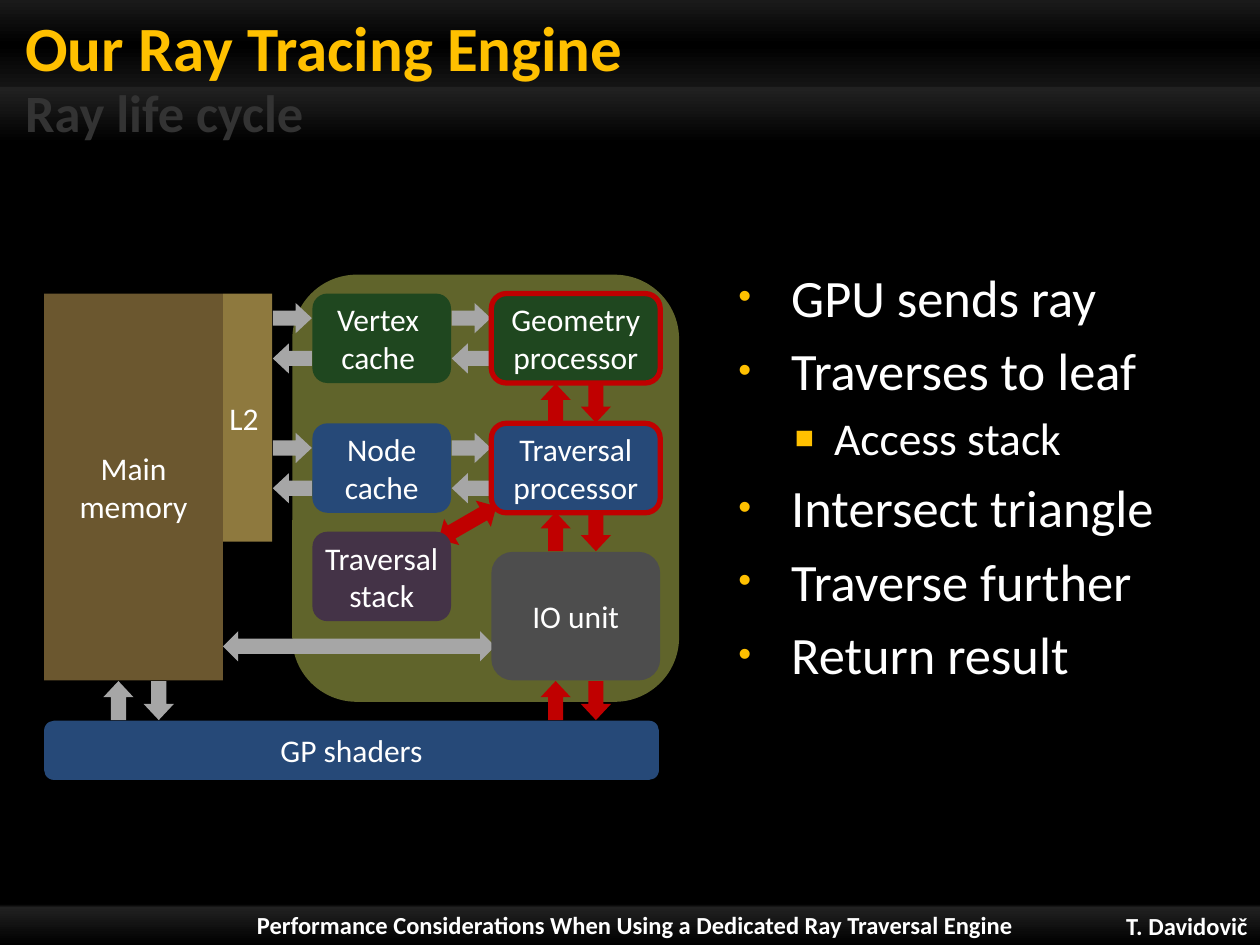
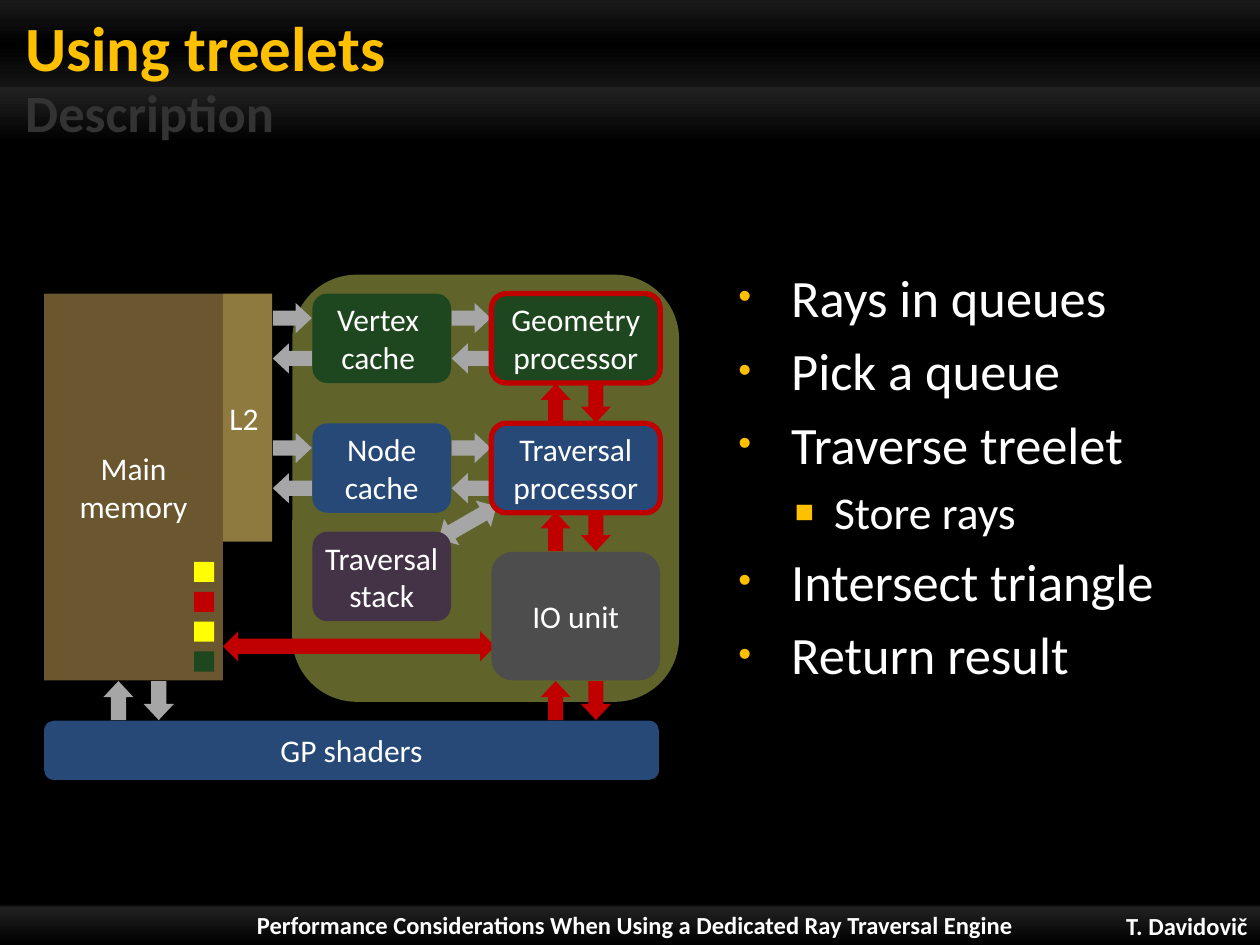
from lxml import etree
from pptx import Presentation
from pptx import util as u
from pptx.dml.color import RGBColor
from pptx.enum import shapes, text
from pptx.oxml.ns import qn

FONT = "Calibri"
WHITE, BLACK, AMBER = "FFFFFF", "000000", "FFC000"
RED, GREY, YELLOW = "C00000", "A6A6A6", "FFFF00"
GREEN, BLUE, PURPLE, IO_GREY = "1F471F", "264978", "443347", "4D4D4D"
OLIVE, BROWN, TAN, SUBTITLE = "F0FC6C", "6B572F", "8E793E", "333333"

TITLE_BAND = [(0, "1A1A1A"), (31, BLACK), (60, "141414"), (61, "212121"), (100, BLACK)]
FOOTER_BAND = [(5, BLACK), (10, "141414"), (11, "212121"), (100, BLACK)]
TALK = "Performance Considerations When Using a Dedicated Ray Traversal Engine"
SPEAKER = "T. Davidovič"

RECT = shapes.MSO_SHAPE.RECTANGLE
ROUND = shapes.MSO_SHAPE.ROUNDED_RECTANGLE
LEFT, CENTER, RIGHT = text.PP_ALIGN.LEFT, text.PP_ALIGN.CENTER, text.PP_ALIGN.RIGHT
TOP, MIDDLE, BOTTOM = (text.MSO_ANCHOR.TOP, text.MSO_ANCHOR.MIDDLE,
                       text.MSO_ANCHOR.BOTTOM)

ROWS = (2.33, 3.36)
BOX_HEIGHT = 0.71
CACHE_LEFT, CACHE_WIDTH = 2.48, 1.1
UNIT_LEFT, UNIT_WIDTH = 3.9, 1.34
ARROW_WIDTH, ARROW_LENGTH = 0.24, 0.31
PAIR_OFFSET = 0.16  # from the middle of a pair to each of its arrows

# (left indent, hanging indent, bullet, size) for each level
LEVELS = [(0.49, -0.42, "•", 30), (0.83, -0.31, "■", 26)]


def rgb(value):
    return RGBColor.from_string(value)


def inches(*values):
    return [u.Inches(value) for value in values]


def add_element(parent, tag, **attributes):
    element = etree.SubElement(parent, qn(tag))
    for name, value in attributes.items():
        element.set(name, str(value))
    return element


class Deck:
    def __init__(self):
        self.presentation = Presentation()
        self.presentation.slide_width, self.presentation.slide_height = inches(10, 7.5)
        background = self.presentation.slide_master.background.fill
        background.solid()
        background.fore_color.rgb = rgb(BLACK)
        self.slide = None

    def start_slide(self, title, subtitle):
        layout = self.presentation.slide_layouts.get_by_name("Title Only")
        self.slide = self.presentation.slides.add_slide(layout)
        self.band(7.16, 0.34, FOOTER_BAND)
        self.band(0, 1.14, TITLE_BAND)
        self.label((8.15, 7.19, 1.85, 0.31), SPEAKER, 14, WHITE, RIGHT)
        self.label((1.4, 7.17, 7.28, 0.34), TALK, 14, WHITE, CENTER)
        heading = self.slide.shapes.title
        heading.left, heading.top, heading.width, heading.height = inches(0, 0, 8.23, 0.67)
        self.slide.shapes._spTree.append(heading._element)  # in front of the band
        self.set_text(heading, title, 36, AMBER, LEFT, BOTTOM, (0.2, 0, 0.1, 0), bold=True)
        self.label((0, 0.65, 6.71, 0.47), subtitle, 30, SUBTITLE, LEFT,
                   margins=(0.2, 0, 0.1, 0))

    def set_text(self, shape, words, size, color, align, anchor=MIDDLE,
                 margins=(0.1, 0.05, 0.1, 0.05), bold=False, wrap=True):
        frame = shape.text_frame
        frame.text = words
        frame.auto_size = text.MSO_AUTO_SIZE.NONE
        frame.word_wrap = wrap
        frame.vertical_anchor = anchor
        (frame.margin_left, frame.margin_top,
         frame.margin_right, frame.margin_bottom) = inches(*margins)
        for paragraph in frame.paragraphs:
            paragraph.alignment = align
            self.set_font(paragraph, size, color, bold)
        return frame

    def set_font(self, paragraph, size, color, bold=False):
        font = paragraph.font
        font.name, font.size, font.bold = FONT, u.Pt(size), bold
        font.color.rgb = rgb(color)

    def label(self, place, words, size, color, align, **style):
        """Add bold text in a box of its own."""
        box = self.slide.shapes.add_textbox(*inches(*place))
        self.set_text(box, words, size, color, align, bold=True, **style)

    def shape(self, kind, place, color, opacity=100):
        shape = self.slide.shapes.add_shape(kind, *inches(*place))
        shape.shadow.inherit = False
        shape.line.fill.background()
        shape.fill.solid()
        shape.fill.fore_color.rgb = rgb(color)
        if opacity < 100:
            fill_color = shape._element.spPr.find(".//" + qn("a:srgbClr"))
            add_element(fill_color, "a:alpha", val=opacity * 1000)
        return shape

    def band(self, top, height, stops):
        """Add a full-width band that shades from top to bottom."""
        band = self.shape(RECT, (0, top, 10, height), BLACK)
        band.fill.gradient()
        band.fill.gradient_angle = 270
        stop_list = band._element.spPr.find(".//" + qn("a:gsLst"))
        stop_list.clear()
        for position, color in stops:
            stop = add_element(stop_list, "a:gs", pos=position * 1000)
            add_element(stop, "a:srgbClr", val=color)

    def block(self, kind, place, words, color, outline=None):
        block = self.shape(kind, place, color)
        self.set_text(block, words, 18, WHITE, CENTER, wrap=False)
        if outline:
            block.line.color.rgb = rgb(outline)
            block.line.width = u.Pt(3)

    def arrow(self, x, y, rotation, color, length=ARROW_LENGTH, double=False):
        """Add a block arrow centred on x, y; it points down before rotation."""
        kind = shapes.MSO_SHAPE.UP_DOWN_ARROW if double else shapes.MSO_SHAPE.DOWN_ARROW
        place = (x - ARROW_WIDTH / 2, y - length / 2, ARROW_WIDTH, length)
        arrow = self.shape(kind, place, color)
        arrow.rotation = rotation
        if not double:
            arrow.adjustments[1] = 0.533

    def vertical_pair(self, x, y, color):
        self.arrow(x - PAIR_OFFSET, y, 180, color)
        self.arrow(x + PAIR_OFFSET, y, 0, color)

    def horizontal_pair(self, x, y, color):
        self.arrow(x, y - PAIR_OFFSET, 270, color)
        self.arrow(x, y + PAIR_OFFSET, 90, color)

    def bullets(self, width, items):
        """Add a list of (level, words)."""
        box = self.slide.shapes.add_textbox(*inches(5.63, 1.94, width, 4.41))
        words = "\n".join(item for _, item in items)
        frame = self.set_text(box, words, 30, WHITE, LEFT, TOP, (0.16, 0.16, 0.1, 0.05))
        for index, (paragraph, (level, _)) in enumerate(zip(frame.paragraphs, items)):
            left, hanging, bullet, size = LEVELS[level]
            paragraph.level = level
            paragraph.space_before = u.Pt(size * 0.2 if index else 0)
            properties = paragraph._p.get_or_add_pPr()
            properties.set("marL", str(u.Inches(left)))
            properties.set("indent", str(u.Inches(hanging)))
            # bullet elements stand before the font defaults
            for old in properties.findall(qn("a:defRPr")):
                properties.remove(old)
            bullet_color = add_element(properties, "a:buClr")
            add_element(bullet_color, "a:srgbClr", val=AMBER)
            add_element(properties, "a:buSzPct", val=70000)
            add_element(properties, "a:buFont", typeface="Arial")
            add_element(properties, "a:buChar", char=bullet)
            self.set_font(paragraph, size, WHITE)

    def engine(self, stack_color, memory_color):
        """Draw the ray tracing engine, with the colours of its two double arrows."""
        self.shape(ROUND, (2.32, 2.18, 3.07, 3.39), OLIVE, opacity=40)
        self.arrow(3.71, 4.15, 60, stack_color, 0.53, double=True)
        self.arrow(2.85, 5.13, 90, memory_color, 2.16, double=True)
        self.vertical_pair(1.1, 5.56, GREY)
        for y in (3.2, 4.22, 5.56):
            self.vertical_pair(4.57, y, RED)
        for row in ROWS:
            for x in (2.32, 3.74):
                self.horizontal_pair(x, row + BOX_HEIGHT / 2, GREY)

        units = [("Vertex \ncache ", "Geometry\nprocessor", GREEN),
                 ("Node\ncache", "Traversal\nprocessor", BLUE)]
        for row, (cache, processor, color) in zip(ROWS, units):
            self.block(ROUND, (CACHE_LEFT, row, CACHE_WIDTH, BOX_HEIGHT), cache, color)
            self.block(ROUND, (UNIT_LEFT, row, UNIT_WIDTH, BOX_HEIGHT), processor, color, RED)
        self.block(ROUND, (CACHE_LEFT, 4.22, CACHE_WIDTH, BOX_HEIGHT),
                   "Traversal\nstack", PURPLE)
        self.block(ROUND, (UNIT_LEFT, 4.38, UNIT_WIDTH, 1.02), "IO unit", IO_GREY)
        self.block(ROUND, (0.35, 5.72, 4.88, 0.47), "GP shaders", BLUE)
        self.block(RECT, (1.77, 2.33, 0.39, 1.97), "L2 ", TAN)
        self.block(RECT, (0.35, 2.33, 1.42, 3.07), "Main\nmemory", BROWN)

    def ray_queues(self, colors):
        for index, color in enumerate(colors):
            self.shape(RECT, (1.54, 4.46 + index * 0.237, 0.16, 0.16), color)


def main():
    deck = Deck()

    deck.start_slide("Our Ray Tracing Engine", "Ray life cycle")
    deck.engine(stack_color=RED, memory_color=GREY)
    deck.bullets(3.86, [(0, "GPU sends ray"), (0, "Traverses to leaf"),
                        (1, "Access stack"), (0, "Intersect triangle"),
                        (0, "Traverse further"), (0, "Return result")])

    deck.start_slide("Using treelets", "Description")
    deck.engine(stack_color=GREY, memory_color=RED)
    deck.ray_queues([YELLOW, RED, YELLOW, GREEN])
    deck.bullets(4.37, [(0, "Rays in queues"), (0, "Pick a queue"),
                        (0, "Traverse treelet"), (1, "Store rays"),
                        (0, "Intersect triangle"), (0, "Return result")])

    deck.presentation.save("out.pptx")


if __name__ == "__main__":
    main()
